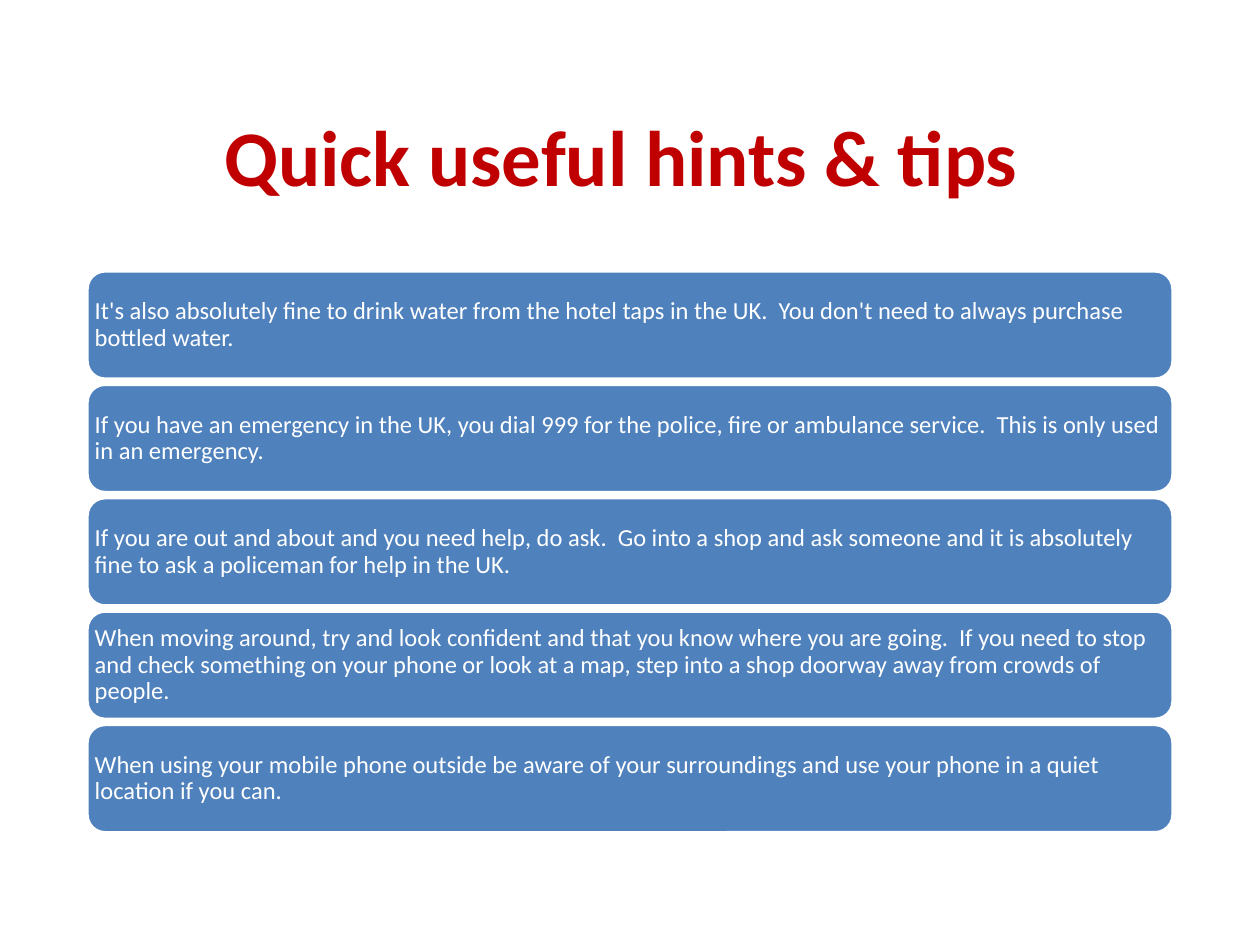
from pptx import Presentation
from pptx.dml.color import RGBColor
from pptx.enum import shapes, text
from pptx.util import Inches, Pt

RED = RGBColor(0xC0, 0x00, 0x00)
BLUE = RGBColor(0x4F, 0x81, 0xBD)
WHITE = RGBColor(0xFF, 0xFF, 0xFF)

LEFT, WIDTH = 0.69, 8.62
FIRST_TIP_TOP, TIP_HEIGHT, TIP_PITCH = 2.15, 0.86, 0.9
TIP_INSET = 0.02

TIPS = [
    "It's also absolutely fine to drink water from the hotel taps in the UK.  "
    "You don't need to always purchase bottled water.",
    "If you have an emergency in the UK, you dial 999 for the police, fire or "
    "ambulance service.  This is only used in an emergency.",
    "If you are out and about and you need help, do ask.  Go into a shop and ask "
    "someone and it is absolutely fine to ask a policeman for help in the UK.",
    "When moving around, try and look confident and that you know where you are "
    "going.  If you need to stop and check something on your phone or look at a "
    "map, step into a shop doorway away from crowds of people.",
    "When using your mobile phone outside be aware of your surroundings and use "
    "your phone in a quiet location if you can.",
]


def write(frame, wording, size, color, align, bold=False):
    frame.word_wrap = True
    frame.vertical_anchor = text.MSO_ANCHOR.MIDDLE
    paragraph = frame.paragraphs[0]
    paragraph.text = wording
    paragraph.alignment = align
    paragraph.font.name = "Calibri"
    paragraph.font.size = Pt(size)
    paragraph.font.bold = bold
    paragraph.font.color.rgb = color
    return paragraph


def add_title(slide, wording):
    title = slide.shapes.add_textbox(
        Inches(LEFT), Inches(0.61), Inches(WIDTH), Inches(1.24))
    write(title.text_frame, wording, 45, RED, text.PP_ALIGN.CENTER, bold=True)


def add_tip(slide, top, wording):
    tip = slide.shapes.add_shape(
        shapes.MSO_SHAPE.ROUNDED_RECTANGLE,
        Inches(LEFT), Inches(top), Inches(WIDTH), Inches(TIP_HEIGHT))
    tip.shadow.inherit = False
    tip.fill.solid()
    tip.fill.fore_color.rgb = BLUE
    tip.line.color.rgb = WHITE
    tip.line.width = Pt(2)
    frame = tip.text_frame
    frame.margin_left = frame.margin_right = Inches(TIP_INSET)
    frame.margin_top = frame.margin_bottom = Inches(TIP_INSET)
    paragraph = write(frame, wording, 14, WHITE, text.PP_ALIGN.LEFT)
    paragraph.line_spacing = 0.9


def main():
    presentation = Presentation()
    presentation.slide_width = Inches(10)
    presentation.slide_height = Inches(7.5)
    slide = presentation.slides.add_slide(presentation.slide_layouts[6])
    add_title(slide, "Quick useful hints & tips ")
    for row, tip in enumerate(TIPS):
        add_tip(slide, FIRST_TIP_TOP + row * TIP_PITCH, tip)
    presentation.save("out.pptx")


if __name__ == "__main__":
    main()
